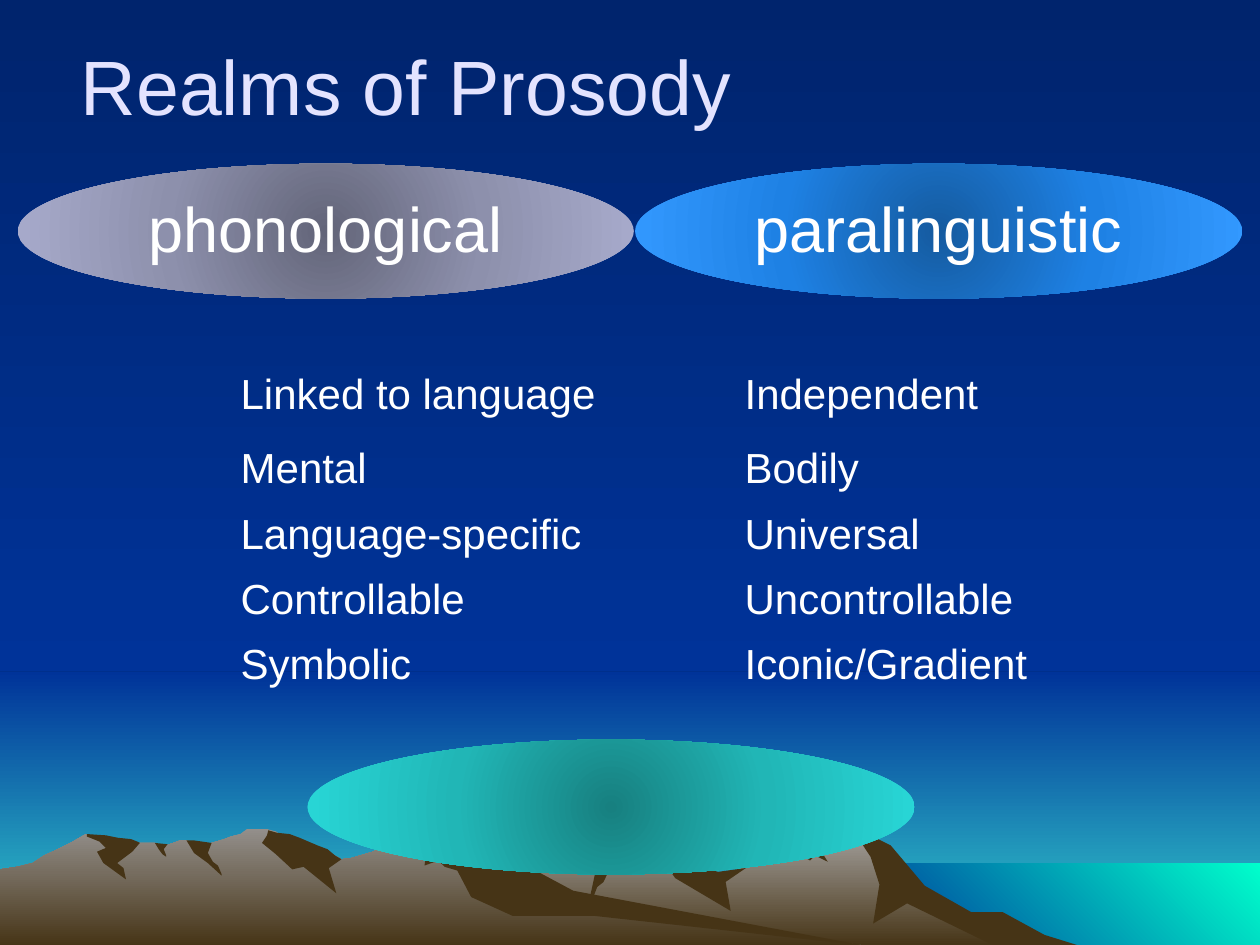
from copy import deepcopy

from pptx import Presentation
from pptx.dml.color import RGBColor
from pptx.enum.shapes import MSO_SHAPE
from pptx.enum.text import MSO_ANCHOR, MSO_AUTO_SIZE, PP_ALIGN
from pptx.oxml.ns import qn
from pptx.oxml.xmlchemy import OxmlElement
from pptx.util import Inches, Pt

# Colours
FONT = "Arial"
WHITE = RGBColor(0xFF, 0xFF, 0xFF)
LILAC = RGBColor(0xE3, 0xE3, 0xFF)
NIGHT = RGBColor(0x00, 0x24, 0x6D)
BLUE = RGBColor(0x00, 0x33, 0x99)
TEAL = RGBColor(0x33, 0xCC, 0xCC)
AQUA = RGBColor(0x00, 0xFF, 0xCC)
BROWN = RGBColor(0x46, 0x34, 0x16)
STONE = RGBColor(0xA5, 0xA2, 0x9F)
ROCK = RGBColor(0x93, 0x8F, 0x8B)
# Oval shades, from the centre outwards
GREYS = [RGBColor(0x63, 0x65, 0x79), RGBColor(0x8D, 0x90, 0xAC), RGBColor(0xA8, 0xAB, 0xCC)]
BLUES = [RGBColor(0x15, 0x5B, 0xA0), RGBColor(0x1E, 0x81, 0xE4), RGBColor(0x33, 0x99, 0xFF)]
GREENS = [RGBColor(0x17, 0x80, 0x80), RGBColor(0x21, 0xB6, 0xB6), RGBColor(0x28, 0xD7, 0xD7)]

# Layout in inches
WIDTH, HEIGHT = 10, 7.5
DUSK = 5.33  # where the dark sky turns to a glow
SHORE, SEA = 6.83, 6.85  # left and top of the water
TALL = 1.07  # height of every oval
COLUMN = 4  # from the first list column to the second
DOWN, RISE = 270, 45  # gradient directions in degrees

# Sky and sea: left, top, right, bottom, first colour, last colour, direction
BANDS = [
    (0, DUSK, WIDTH, HEIGHT, BLUE, TEAL, DOWN),
    (0, 0, WIDTH, DUSK, NIGHT, BLUE, DOWN),
    (SHORE, SEA, WIDTH, HEIGHT, BLUE, AQUA, RISE),
]

# Realms: left, top, width, shades, label
OVALS = [
    (0.14, 1.3, 4.89, GREYS, "phonological"),
    (2.44, 5.87, 4.82, GREENS, ""),
    (5.04, 1.3, 4.82, BLUES, "paralinguistic"),
]

# Traits of each realm, side by side
TRAITS = [
    ("Linked to language", "Independent"),
    ("Mental", "Bodily"),
    ("Language-specific", "Universal"),
    ("Controllable", "Uncontrollable"),
    ("Symbolic", "Iconic/Gradient"),
]

# Mountain outlines as x, y points in hundredths of an inch
FAR_RIDGE = [
    (802, 740), (778, 727), (764, 723), (723, 698), (702, 671), (685, 660), (676, 666),
    (656, 671), (629, 671), (613, 681), (566, 697), (536, 690), (529, 676), (526, 673),
    (509, 669), (497, 671), (486, 673), (474, 661), (471, 658), (465, 658), (450, 664),
    (438, 671), (430, 671), (418, 675), (405, 681), (394, 685), (355, 698), (327, 709),
    (277, 739), (258, 751), (821, 751)]
FAR_SHADE = [
    [(796, 724), (771, 724), (734, 703), (707, 671), (685, 660), (689, 664), (685, 671),
     (691, 680), (698, 702), (693, 733), (720, 717), (792, 752), (858, 751), (829, 742)],
    [(471, 658), (474, 662), (469, 664), (468, 671), (472, 680), (473, 690), (465, 727),
     (474, 704), (479, 700), (487, 683), (490, 682), (490, 676), (497, 671), (493, 670)],
    [(529, 676), (528, 678), (526, 683), (536, 697), (580, 723), (576, 700), (592, 689),
     (570, 692), (542, 685)],
    [(650, 671), (630, 671), (631, 672), (631, 675), (630, 676), (643, 683), (647, 679),
     (657, 684), (652, 676), (656, 671)],
    [(433, 677), (432, 673), (434, 671), (438, 671), (439, 670), (437, 673), (439, 679),
     (434, 684)],
]
NEAR_RIDGE = [
    (690, 751), (667, 748), (432, 712), (354, 665), (331, 663), (327, 668), (323, 668),
    (318, 664), (296, 676), (279, 681), (271, 682), (260, 676), (236, 681), (223, 663),
    (219, 660), (212, 658), (196, 658), (191, 662), (183, 664), (178, 666), (168, 669),
    (160, 671), (148, 667), (143, 667), (132, 671), (128, 671), (123, 669), (111, 669),
    (94, 671), (68, 662), (56, 669), (46, 674), (35, 679), (26, 685), (14, 688),
    (0, 690), (0, 751)]
NEAR_SHADE = [
    [(212, 663), (208, 669), (219, 678), (232, 690), (241, 688), (267, 709), (261, 689),
     (271, 682), (266, 679), (260, 674), (252, 671), (238, 665), (230, 662), (220, 661),
     (213, 659)],
    [(370, 668), (361, 666), (354, 665), (344, 665), (339, 669), (337, 687), (348, 683),
     (353, 688), (363, 691), (374, 712), (407, 727), (472, 727), (690, 751), (683, 750),
     (455, 707), (427, 692), (411, 684), (401, 681), (386, 675)],
    [(318, 667), (320, 666), (318, 664), (323, 667), (327, 667), (330, 673), (330, 674),
     (326, 671), (322, 669), (321, 671), (319, 672)],
    [(154, 667), (161, 668), (168, 669), (165, 677), (169, 684), (173, 687), (176, 694),
     (176, 695), (165, 685), (154, 677), (148, 667)],
    [(133, 670), (130, 674), (132, 679), (132, 680), (129, 678), (126, 674), (123, 669)],
    [(109, 668), (111, 669), (105, 676), (93, 685), (98, 689), (100, 698), (82, 685),
     (77, 676), (84, 673), (79, 668), (69, 664), (69, 662), (84, 663), (94, 665),
     (104, 666)],
]
# Back to front: outline, lit colour, shaded faces
RANGES = [(FAR_RIDGE, STONE, FAR_SHADE), (NEAR_RIDGE, ROCK, NEAR_SHADE)]


def put(item, **values):
    for name, value in values.items():
        setattr(item, name, value)


def blend(fill, first, last, angle):
    """Linear gradient between two colours."""
    fill.gradient()
    fill.gradient_angle = angle
    for stop, color in zip(fill.gradient_stops, (first, last)):
        stop.color.rgb = color


def glow(shape, shades):
    """Round gradient, evenly stepped from the centre."""
    blend(shape.fill, shades[0], shades[-1], 0)
    grad = shape._element.spPr.find(qn("a:gradFill"))
    stops = grad.find(qn("a:gsLst"))
    stops.insert(1, deepcopy(stops[0]))
    for i, (stop, color) in enumerate(zip(shape.fill.gradient_stops, shades)):
        stop.position = i / (len(shades) - 1)
        stop.color.rgb = color
    grad.remove(grad.find(qn("a:lin")))
    ring, core = OxmlElement("a:path"), OxmlElement("a:fillToRect")
    ring.set("path", "circle")
    for side in "ltrb":
        core.set(side, "50000")
    ring.append(core)
    grad.append(ring)


def plain(shape):
    """No shadow and no outline."""
    shape.shadow.inherit = False
    shape.line.fill.background()
    return shape


def band(slide, left, top, right, bottom, first, last, angle):
    box = map(Inches, (left, top, right - left, bottom - top))
    shape = plain(slide.shapes.add_shape(MSO_SHAPE.RECTANGLE, *box))
    blend(shape.fill, first, last, angle)


def rock(slide, points):
    """Closed outline in flat brown."""
    pen = slide.shapes.build_freeform(*points[0], scale=Inches(0.01))
    pen.add_line_segments(points[1:], close=True)
    shape = plain(pen.convert_to_shape())
    shape.fill.solid()
    shape.fill.fore_color.rgb = BROWN
    return shape


def write(par, text, size, color, **layout):
    put(par, text=text, **layout)
    for run in par.runs:
        put(run.font, name=FONT, size=Pt(size))
        run.font.color.rgb = color


def oval(slide, left, top, width, shades, label):
    box = map(Inches, (left, top, width, TALL))
    shape = plain(slide.shapes.add_shape(MSO_SHAPE.OVAL, *box))
    glow(shape, shades)
    if label:
        put(shape.text_frame, word_wrap=True, vertical_anchor=MSO_ANCHOR.TOP)
        write(shape.text_frame.paragraphs[0], label, 36, WHITE, alignment=PP_ALIGN.CENTER)


def place(slide, holder, box, anchor):
    """Set a placeholder's frame and bring it in front of the scenery."""
    put(holder, **dict(zip(("left", "top", "width", "height"), map(Inches, box))))
    put(holder.text_frame, word_wrap=True, auto_size=MSO_AUTO_SIZE.NONE, vertical_anchor=anchor)
    slide.shapes._spTree.append(holder._element)
    return holder.text_frame


def pairs(frame):
    """One line per pair; the tab width sets the second column."""
    for i, pair in enumerate(TRAITS):
        par = frame.add_paragraph() if i else frame.paragraphs[0]
        write(par, "\t".join(pair), 24, WHITE, alignment=PP_ALIGN.LEFT,
              line_spacing=Pt(37.4), space_before=Pt(4.8 if i < 2 else 0))
        props = par._p.get_or_add_pPr()
        for name, value in {"marL": 0, "indent": 0, "defTabSz": Inches(COLUMN)}.items():
            props.set(name, str(int(value)))
        props.append(OxmlElement("a:buNone"))


def main():
    deck = Presentation()
    put(deck, slide_width=Inches(WIDTH), slide_height=Inches(HEIGHT))
    slide = deck.slides.add_slide(deck.slide_layouts[1])
    title, body = slide.placeholders

    # Scenery
    blend(slide.background.fill, NIGHT, BLUE, DOWN)
    for item in BANDS:
        band(slide, *item)
    for ridge, light, shade in RANGES:
        blend(rock(slide, ridge).fill, light, BROWN, DOWN)
        for face in shade:
            rock(slide, face)

    # Title, list and realms
    frame = place(slide, title, (0.54, 0.05, 9, 1.25), MSO_ANCHOR.MIDDLE)
    write(frame.paragraphs[0], "Realms of Prosody", 44, LILAC, alignment=PP_ALIGN.LEFT)
    pairs(place(slide, body, (1.81, 2.75, 6.73, 3.33), MSO_ANCHOR.TOP))
    for item in OVALS:
        oval(slide, *item)

    deck.save("out.pptx")


if __name__ == "__main__":
    main()
